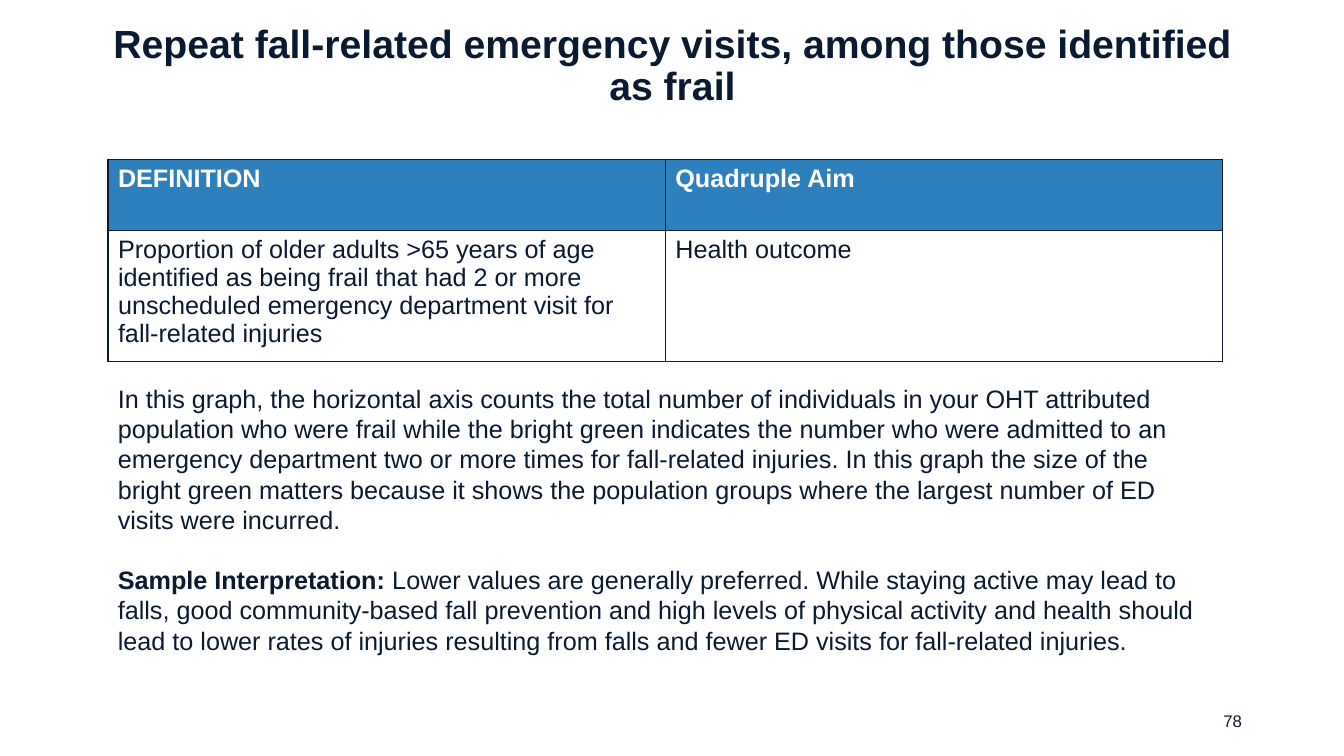
from dataclasses import dataclass

from lxml.etree import SubElement
from pptx import Presentation
from pptx.dml.color import RGBColor
from pptx.enum.text import MSO_ANCHOR, PP_ALIGN
from pptx.oxml.ns import qn
from pptx.util import Cm, Pt

# Content
TITLE = "Repeat fall-related emergency visits, among those identified as frail"
DEFINITION_ROWS = [
    ("DEFINITION", "Quadruple Aim"),
    ("Proportion of older adults >65 years of age identified as being frail that had "
     "2 or more unscheduled emergency department visit for fall-related injuries",
     "Health outcome"),
]
# Each paragraph is a list of (text, bold) spans
EXPLANATION = [
    [("In this graph, the horizontal axis counts the total number of individuals "
      "in your OHT attributed population who were frail while the bright green "
      "indicates the number who were admitted to an emergency department two or more "
      "times for fall-related injuries. In this graph the size of the bright green "
      "matters because it shows the population groups where the largest number of ED "
      "visits were incurred.", False)],
    [("Sample Interpretation: ", True),
     ("Lower values are generally preferred. While staying active may lead to falls, "
      "good community-based fall prevention and high levels of physical activity and "
      "health should lead to lower rates of injuries resulting from falls and fewer "
      "ED visits for fall-related injuries.", False)],
]
PAGE_NUMBER = "78"


@dataclass(frozen=True)
class Theme:
    font: str = "Arial"
    ink: RGBColor = RGBColor(0x0A, 0x1A, 0x31)
    header: RGBColor = RGBColor(0x2E, 0x80, 0xBC)
    white: RGBColor = RGBColor(0xFF, 0xFF, 0xFF)
    title_size: Pt = Pt(28)
    body_size: Pt = Pt(18)
    number_size: Pt = Pt(12)
    border: Pt = Pt(1)


THEME = Theme()

# Layout
LEFT, WIDTH = Cm(2.72), Cm(28.09)
TABLE_TOP, ROW_HEIGHTS = Cm(4.01), (Cm(1.79), Cm(3.3))
BODY_TOP, BODY_HEIGHT = Cm(9.53), Cm(7.19)


def style(para, size, color=THEME.ink, bold=False):
    para.font.name = THEME.font
    para.font.size = size
    para.font.bold = bold
    para.font.color.rgb = color


def add_borders(cell):
    properties = cell._tc.get_or_add_tcPr()
    for position, side in enumerate(("a:lnL", "a:lnR", "a:lnT", "a:lnB")):
        line = properties.makeelement(qn(side), {"w": str(THEME.border)})
        fill = SubElement(line, qn("a:solidFill"))
        SubElement(fill, qn("a:srgbClr"), val=str(THEME.ink))
        properties.insert(position, line)


def add_title(page):
    title = page.shapes.title
    title.left, title.top, title.width, title.height = Cm(1.96), Cm(0.61), Cm(29.97), Cm(2.13)
    title.text_frame.text = TITLE
    title.text_frame.word_wrap = True
    title.text_frame.vertical_anchor = MSO_ANCHOR.MIDDLE
    para = title.text_frame.paragraphs[0]
    para.alignment = PP_ALIGN.CENTER
    para.line_spacing = 0.9
    style(para, THEME.title_size, bold=True)


def add_definition_table(page):
    columns = len(DEFINITION_ROWS[0])
    table = page.shapes.add_table(len(DEFINITION_ROWS), columns, LEFT, TABLE_TOP,
                                  WIDTH, sum(ROW_HEIGHTS)).table
    for row, (texts, height) in enumerate(zip(DEFINITION_ROWS, ROW_HEIGHTS)):
        table.rows[row].height = height
        is_header = row == 0
        for column, text in enumerate(texts):
            cell = table.cell(row, column)
            cell.text = text
            cell.fill.solid()
            cell.fill.fore_color.rgb = THEME.header if is_header else THEME.white
            style(cell.text_frame.paragraphs[0], THEME.body_size,
                  THEME.white if is_header else THEME.ink, is_header)
            add_borders(cell)


def add_explanation(page):
    frame = page.shapes.add_textbox(LEFT, BODY_TOP, WIDTH, BODY_HEIGHT).text_frame
    frame.word_wrap = True
    for index, spans in enumerate(EXPLANATION):
        para = frame.paragraphs[0] if index == 0 else frame.add_paragraph()
        if index:
            para.space_before = Pt(21.6)
        style(para, THEME.body_size)
        for text, bold in spans:
            span = para.add_run()
            span.text = text
            span.font.bold = bold


def add_page_number(page):
    frame = page.shapes.add_textbox(Cm(23.93), Cm(17.65), Cm(7.62), Cm(1.02)).text_frame
    frame.word_wrap = True
    frame.vertical_anchor = MSO_ANCHOR.MIDDLE
    frame.text = PAGE_NUMBER
    para = frame.paragraphs[0]
    para.alignment = PP_ALIGN.RIGHT
    style(para, THEME.number_size)


def main():
    deck = Presentation()
    deck.slide_width, deck.slide_height = Cm(33.87), Cm(19.05)
    page = deck.slides.add_slide(deck.slide_layouts[5])
    add_title(page)
    add_definition_table(page)
    add_explanation(page)
    add_page_number(page)
    deck.save("out.pptx")


if __name__ == "__main__":
    main()
